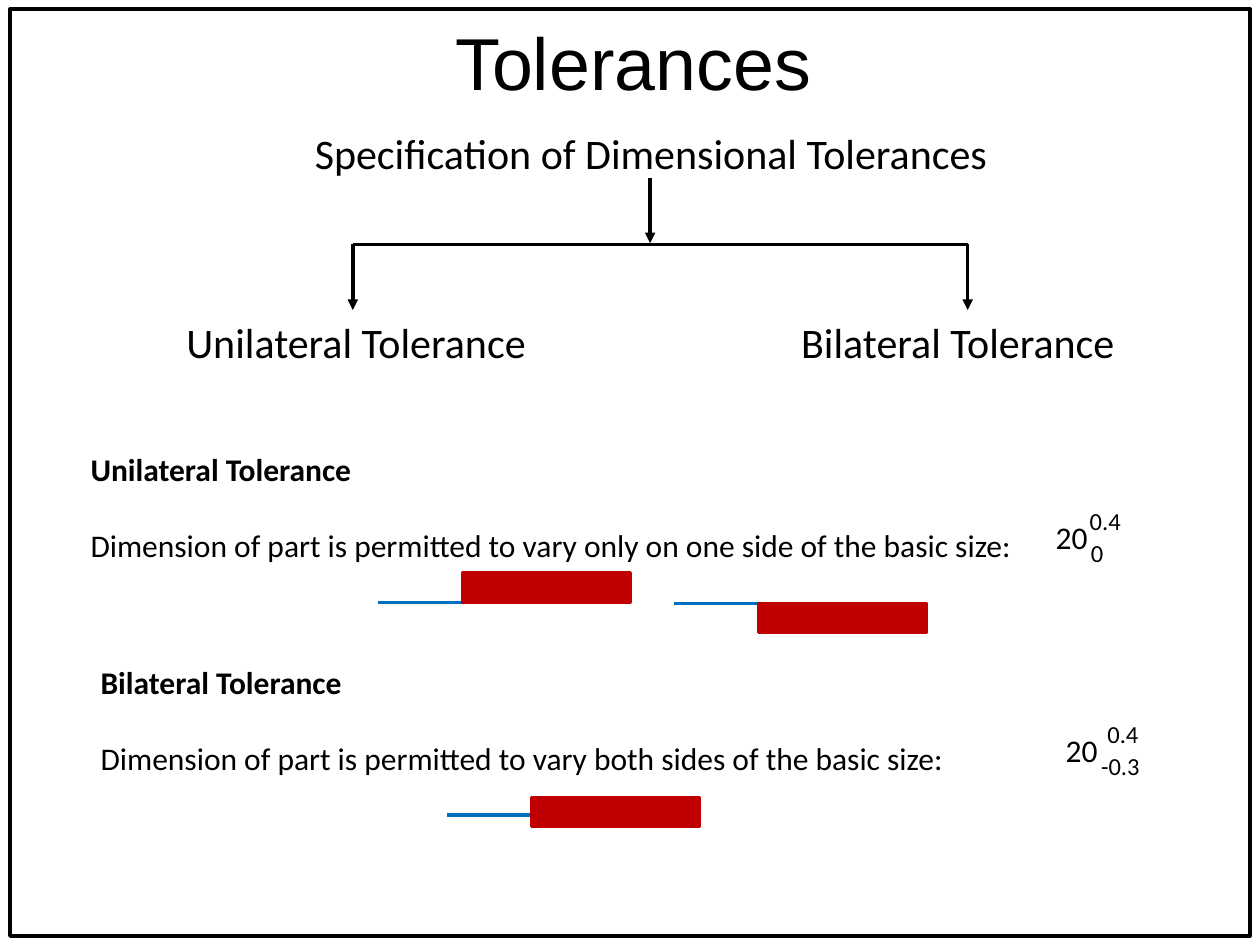
from pptx import Presentation
from pptx.dml.color import RGBColor
from pptx.enum import shapes, text
from pptx.oxml.ns import qn
from pptx.util import Inches, Pt

THEME = {
    "ink": RGBColor(0x00, 0x00, 0x00),
    "basic": RGBColor(0x00, 0x70, 0xC0),
    "zone": RGBColor(0xC0, 0x00, 0x00),
    "title_font": "Arial", "font": "Calibri",
    "title": Pt(42), "branch": Pt(24), "body": Pt(18), "limit": Pt(14),
    "stroke": Pt(2), "paragraph_gap": Pt(22),
}

deck = Presentation()
deck.slide_width, deck.slide_height = Inches(10), Inches(7.5)
page = deck.slides.add_slide(deck.slide_layouts[5])
CELL = deck.slide_width / 100  # grid of 100 columns by 75 rows


def write(column, row, columns, rows, lines, size, bold_first=False, wrap=False):
    box = page.shapes.add_textbox(*(round(n * CELL) for n in (column, row, columns, rows)))
    frame = box.text_frame
    frame.word_wrap = wrap
    for index, line in enumerate(lines):
        para = frame.paragraphs[0] if index == 0 else frame.add_paragraph()
        if index:
            para.space_before = THEME["paragraph_gap"]
        span = para.add_run()
        span.text = line
        span.font.name, span.font.size = THEME["font"], size
        span.font.bold = bold_first and index == 0
        span.font.color.rgb = THEME["ink"]


def draw_line(start, end, color, arrow=False):
    line = page.shapes.add_connector(
        shapes.MSO_CONNECTOR.STRAIGHT, *(round(n * CELL) for n in (*start, *end)))
    line.line.color.rgb, line.line.width = color, THEME["stroke"]
    properties = line._element.spPr
    if arrow:
        outline = line.line._get_or_add_ln()
        outline.append(outline.makeelement(qn("a:tailEnd"), {"type": "triangle"}))
    properties.append(properties.makeelement(qn("a:effectLst"), {}))


# Page frame
frame = page.shapes.add_shape(
    shapes.MSO_SHAPE.RECTANGLE, *(round(n * CELL) for n in (0.8, 0.7, 98.4, 73.6)))
frame.shadow.inherit = False
frame.fill.background()
frame.line.color.rgb, frame.line.width = THEME["ink"], THEME["stroke"]

# Title
title = page.shapes.title
title.left, title.top, title.width, title.height = (
    round(n * CELL) for n in (35, 0.8, 30.5, 8.1))
title.text_frame.word_wrap = False
title.text_frame.auto_size = text.MSO_AUTO_SIZE.NONE
para = title.text_frame.paragraphs[0]
para.alignment = text.PP_ALIGN.CENTER
span = para.add_run()
span.text = "Tolerances"
span.font.name, span.font.size = THEME["title_font"], THEME["title"]
span.font.color.rgb = THEME["ink"]

# Tree: heading, stem, crossbar and two branches
write(24, 9.6, 56.7, 5, ["Specification of Dimensional Tolerances"], THEME["branch"], wrap=True)
BAR_ROW, LEFT, RIGHT = 19.4, 28, 76.8
draw_line((51.6, 14.1), (51.6, 19.3), THEME["ink"], arrow=True)
draw_line((LEFT, BAR_ROW), (RIGHT, BAR_ROW), THEME["ink"])
for branch, column, columns, label in (
        (LEFT, 13.8, 29.1, "Unilateral Tolerance"),
        (RIGHT, 62.6, 27.6, "Bilateral Tolerance")):
    draw_line((branch, BAR_ROW), (branch, 24.6), THEME["ink"], arrow=True)
    write(column, 24.6, columns, 5, [label], THEME["branch"], wrap=True)

# Explanations, each with a dimension and its upper and lower limits (shift, width, value)
for column, row, columns, name, sentence, upper, lower in (
        (6.2, 35.2, 77.8, "Unilateral Tolerance",
         "Dimension of part is permitted to vary only on one side of the basic size:",
         (2.7, 4.8, "0.4"), (2.8, 3.2, "0")),
        (7, 52.1, 69.8, "Bilateral Tolerance",
         "Dimension of part is permitted to vary both sides of the basic size:",
         (3.3, 4.8, "0.4"), (2.8, 5.6, "-0.3"))):
    write(column, row, columns, 10.1, [name, sentence], THEME["body"], bold_first=True)
    size_column, size_row = column + 76.6, row + 5.4
    write(size_column, size_row, 4.8, 4, ["20"], THEME["body"])
    for (shift, width, limit), drop in ((upper, -0.9), (lower, 1.6)):
        write(size_column + shift, size_row + drop, width, 3.4, [limit], THEME["limit"])

# Tolerance zones above, below and across the basic size line
for column, basic_row, zone_row in ((30, 47.8, 45.5), (53.5, 47.9, 47.9), (35.5, 64.7, 63.3)):
    draw_line((column, basic_row), (column + 16.4, basic_row), THEME["basic"])
    zone = page.shapes.add_shape(
        shapes.MSO_SHAPE.RECTANGLE,
        *(round(n * CELL) for n in (column + 6.7, zone_row, 13.3, 2.3)))
    zone.shadow.inherit = False
    zone.fill.solid()
    zone.fill.fore_color.rgb = THEME["zone"]
    zone.line.color.rgb, zone.line.width = THEME["zone"], THEME["stroke"]

deck.save("out.pptx")
